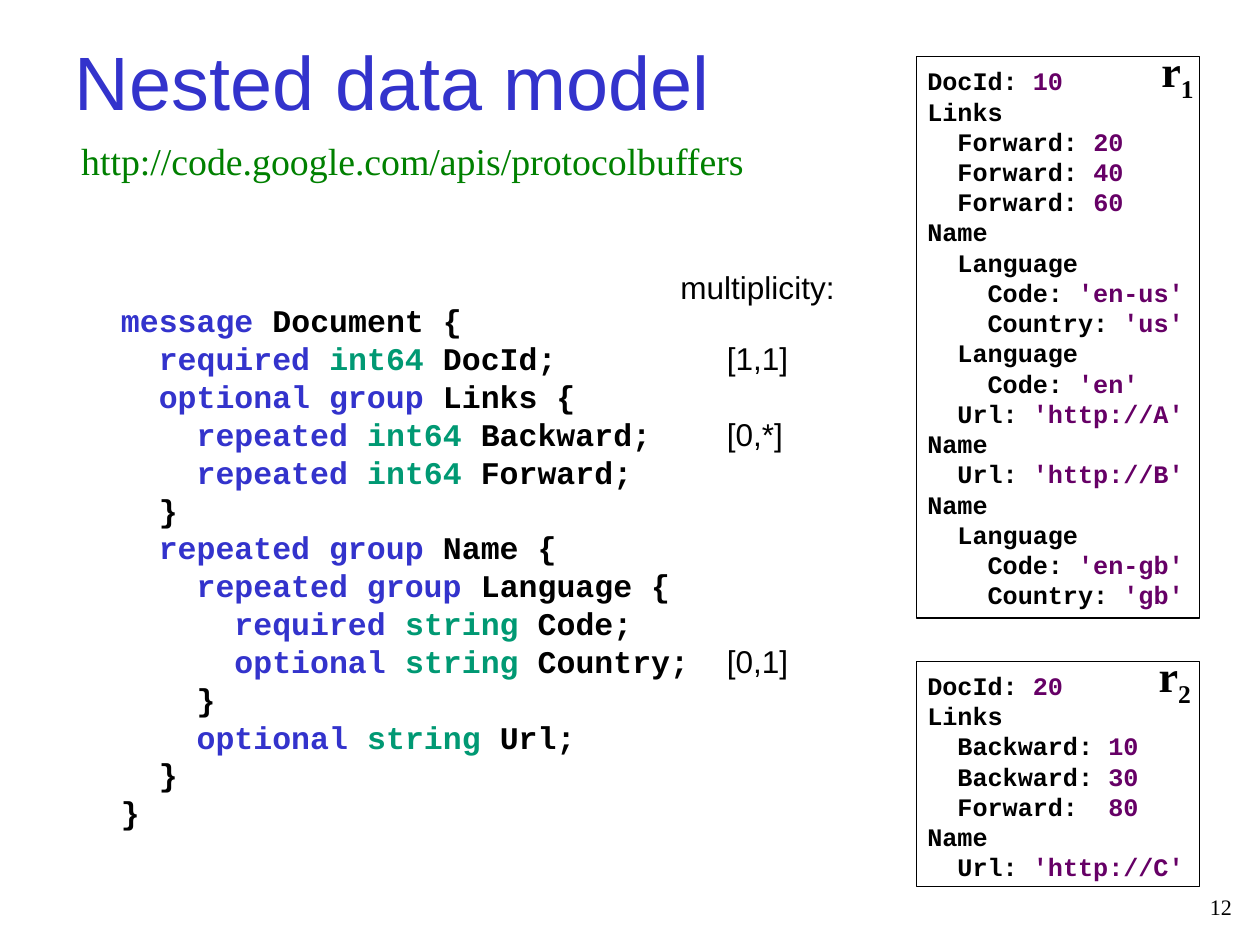
from itertools import groupby
from lxml.etree import SubElement
from pptx import Presentation
from pptx.dml.color import RGBColor
from pptx.enum.shapes import MSO_SHAPE
from pptx.enum.text import MSO_ANCHOR, PP_ALIGN
from pptx.oxml.ns import qn
from pptx.util import Cm, Pt

BLACK, BLUE, TEAL = "000000", "3333CC", "009973"
PURPLE, GREEN = "660066", "008000"
SANS, MONO, SERIF = "Arial", "Courier New", "Times New Roman"

TITLE = "Nested data model"
HUES = dict.fromkeys(
    ["message", "required", "optional", "repeated", "group"], BLUE)
HUES |= dict.fromkeys(["int64", "string"], TEAL)

SCHEMA = """\
message Document {
  required int64 DocId;\t[1,1]
  optional group Links {
    repeated int64 Backward;\t[0,*]
    repeated int64 Forward;
  }
  repeated group Name {
    repeated group Language {
      required string Code;
      optional string Country;\t[0,1]
    }
    optional string Url;
  }
}"""

FIRST = """\
DocId: 10
Links
  Forward: 20
  Forward: 40
  Forward: 60
Name
  Language
    Code: 'en-us'
    Country: 'us'
  Language
    Code: 'en'
  Url: 'http://A'
Name
  Url: 'http://B'
Name
  Language
    Code: 'en-gb'
    Country: 'gb'"""

SECOND = """\
DocId: 20
Links
  Backward: 10
  Backward: 30
  Forward:  80
Name
  Url: 'http://C'"""

# record text, top and height of its box, left and top of its label (cm)
RECORDS = [
    (FIRST, 1.27, 12.57, 25.76, 0.84),
    (SECOND, 14.81, 5.05, 25.7, 14.4),
]

# text, box (cm), font, size, colour, alignment
LABELS = [
    ("http://code.google.com/apis/protocolbuffers", (1.57, 2.95, 15.8, 1.27),
     SERIF, 24, GREEN, PP_ALIGN.LEFT),
    ("multiplicity:", (14.99, 5.87, 4.2, 1.12),
     SANS, 20, BLACK, PP_ALIGN.LEFT),
    ("12", (25.76, 19.89, 2.08, 0.81), SERIF, 14, BLACK, PP_ALIGN.RIGHT),
]


def rgb(hue):
    return RGBColor.from_string(hue)


def style(font, name, size, hue=BLACK, bold=False):
    font.name, font.size, font.bold = name, Pt(size), bold
    font.color.rgb = rgb(hue)


def add_text(slide, box):
    frame = slide.shapes.add_textbox(*map(Cm, box)).text_frame
    frame.word_wrap = True
    return frame


def add_run(para, text, hue=BLACK):
    run = para.add_run()
    run.text = text
    run.font.color.rgb = rgb(hue)
    return run


def add_lines(frame, text, size):
    """Yield a code paragraph with each line of text."""
    frame.margin_top = Cm(0.2)
    for i, line in enumerate(text.split("\n")):
        para = frame.add_paragraph() if i else frame.paragraphs[0]
        para.alignment = PP_ALIGN.LEFT
        para.line_spacing = Pt(size * 1.2)
        yield para, line


def add_schema(slide):
    frame = add_text(slide, (2.46, 6.55, 16.94, 12.22))
    for para, line in add_lines(frame, SCHEMA, 20):
        code, tab, count = line.partition("\t")
        if tab:
            stops = SubElement(para._p.get_or_add_pPr(), qn("a:tabLst"))
            SubElement(stops, qn("a:tab"), pos=str(Cm(13.57)), algn="l")
        style(para.font, MONO, 20, bold=True)
        body = code.lstrip()
        words = [w + " " for w in body.split(" ")]
        words[0] = " " * (len(code) - len(body)) + words[0]
        words[-1] = words[-1].rstrip(" ")
        for hue, part in groupby(
                words, lambda w: HUES.get(w.strip(), BLACK)):
            add_run(para, "".join(part), hue)
        if tab:
            style(add_run(para, tab + count).font, SANS, 20)


def add_record(slide, num, text, top, high, left, head):
    box = slide.shapes.add_shape(
        MSO_SHAPE.RECTANGLE, Cm(20.52), Cm(top), Cm(6.35), Cm(high))
    box.shadow.inherit = False
    box.fill.background()
    box.line.color.rgb = rgb(BLACK)
    box.line.width = Pt(0.75)
    frame = box.text_frame
    frame.vertical_anchor = MSO_ANCHOR.TOP
    for para, line in add_lines(frame, text, 16):
        style(para.font, MONO, 16, bold=True)
        key, colon, value = line.partition(": ")
        add_run(para, key + colon)
        if value:
            add_run(para, value, PURPLE)

    para = add_text(slide, (left, head, 1.7, 1.45)).paragraphs[0]
    style(para.font, SERIF, 28, bold=True)
    add_run(para, "r")
    sub = add_run(para, str(num))
    sub.font._element.set("baseline", "-25000")


def main():
    deck = Presentation()
    deck.slide_width, deck.slide_height = Cm(28.22), Cm(21.16)
    slide = deck.slides.add_slide(deck.slide_layouts[5])

    title = slide.shapes.title
    title.left, title.top = Cm(1.42), Cm(0.43)
    title.width, title.height = Cm(17.78), Cm(2.74)
    frame = title.text_frame
    frame.text = TITLE
    frame.vertical_anchor = MSO_ANCHOR.MIDDLE
    para = frame.paragraphs[0]
    para.alignment = PP_ALIGN.LEFT
    style(para.font, SANS, 48, BLUE)

    add_schema(slide)
    for num, record in enumerate(RECORDS, 1):
        add_record(slide, num, *record)
    for text, box, name, size, hue, align in LABELS:
        para = add_text(slide, box).paragraphs[0]
        para.text = text
        para.alignment = align
        style(para.font, name, size, hue)

    deck.save("out.pptx")


if __name__ == "__main__":
    main()
